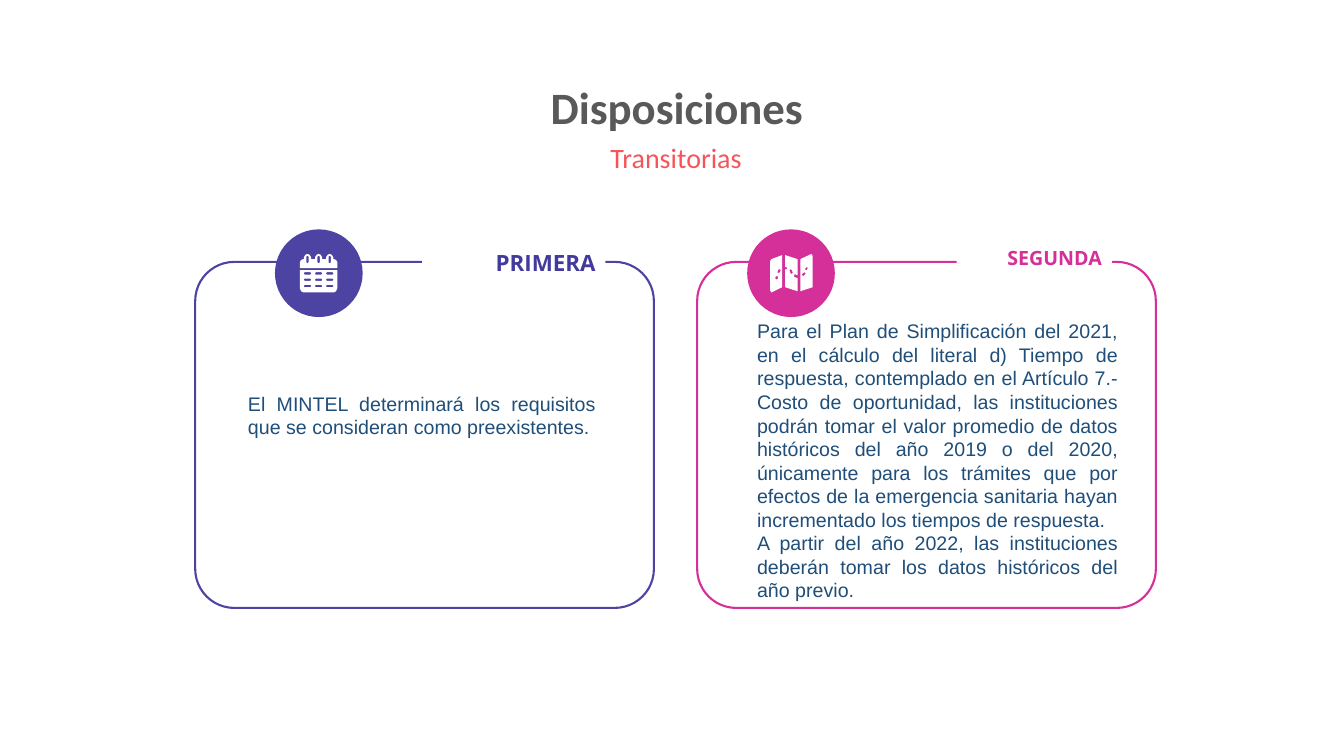
from pptx import Presentation
from pptx.dml.color import RGBColor
from pptx.enum.shapes import MSO_SHAPE
from pptx.enum.text import MSO_ANCHOR, PP_ALIGN
from pptx.util import Cm, Pt

COLORS = {
    "title": "595959",
    "subtitle": "F75459",
    "purple": "4D43A3",
    "purple_text": "423A9C",
    "pink": "D5309A",
    "body": "1F4E79",
    "white": "FFFFFF",
}


def color(name):
    return RGBColor.from_string(COLORS[name])


def paint(shape, fill, line=None):
    shape.shadow.inherit = False
    if fill:
        shape.fill.solid()
        shape.fill.fore_color.rgb = color(fill)
    else:
        shape.fill.background()
    if line:
        shape.line.color.rgb = color(line)
        shape.line.width = Pt(1.5)
    else:
        shape.line.fill.background()


def add_preset(shapes, kind, box, fill=None, line=None):
    shape = shapes.add_shape(kind, *(Cm(length) for length in box))
    paint(shape, fill, line)
    return shape


def add_outline(shapes, left, top, contours):
    """Draw one white shape; contours after the first are cut out of it."""
    builder = None
    for contour in contours:
        start, *others = [(Cm(left + x), Cm(top + y)) for x, y in contour]
        if builder:
            builder.move_to(*start)
        else:
            builder = shapes.build_freeform(*start)
        builder.add_line_segments(others, close=True)
    paint(builder.convert_to_shape(), "white")


def write(shape, texts, size, font, ink, align, bold=False,
          anchor=MSO_ANCHOR.TOP, inset=0.25):
    frame = shape.text_frame
    frame.word_wrap = True
    frame.vertical_anchor = anchor
    frame.margin_left = frame.margin_right = Cm(0.25)
    frame.margin_top = frame.margin_bottom = Cm(inset)
    for index, text in enumerate(texts):
        para = frame.add_paragraph() if index else frame.paragraphs[0]
        para.alignment = align
        span = para.add_run()
        span.text = text
        span.font.size = Pt(size)
        span.font.name = font
        span.font.bold = bold
        span.font.color.rgb = color(ink)
    return frame


def add_text(page, box, *args, **options):
    shape = page.shapes.add_textbox(*(Cm(length) for length in box))
    return write(shape, *args, **options)


def add_heading(page, left, top, width):
    frame = add_text(page, (left, top, width, 1.68), ["Disposiciones"], 32,
                     "Calibri", "title", PP_ALIGN.CENTER, bold=True, inset=0.13)
    frame.paragraphs[0].line_spacing = 1.1
    frame.paragraphs[0].space_after = Pt(6)
    add_text(page, (left + 3.33, top + 1.66, width - 6.7, 1.11), ["Transitorias"],
             20, "Calibri", "subtitle", PP_ALIGN.CENTER, inset=0.13)


def pill(x, y, width, height):
    cut = min(width, height) / 3
    right, bottom = x + width, y + height
    return [(x + cut, y), (right - cut, y), (right, y + cut), (right, bottom - cut),
            (right - cut, bottom), (x + cut, bottom), (x, bottom - cut), (x, y + cut)]


def add_calendar(shapes, left, top):
    columns = [0.1 + 0.28 * column for column in range(3)]
    # Sheet with day marks
    sheet = [(0, 0.41), (0.94, 0.41), (0.94, 0.87), (0.91, 0.94), (0.85, 0.97),
             (0.09, 0.97), (0.03, 0.94), (0, 0.87)]
    days = [pill(x, 0.46 + 0.16 * row, 0.18, 0.06)
            for row in range(3) for x in columns]
    add_outline(shapes, left, top, [sheet, *days])
    # Header with binding rings
    ring = [(0, 0.13), (0, 0.08), (0.04, 0.02), (0.09, 0), (0.14, 0.02),
            (0.18, 0.08), (0.18, 0.13)]
    header = [(0, 0.36), (0, 0.2), (0.03, 0.15), (0.08, 0.13)]
    header += [(x + dx, y) for x in columns for dx, y in ring]
    header += [(0.86, 0.13), (0.91, 0.15), (0.94, 0.2), (0.94, 0.36)]
    slots = [pill(x + 0.06, 0.05, 0.06, 0.18) for x in columns]
    add_outline(shapes, left, top, [header, *slots])


def add_map(shapes, left, top):
    # Three folded panels, each with its stretch of the dashed route cut out
    panels = [
        [[(0.3, 0.03), (0.03, 0.13), (0, 0.18), (0, 0.92), (0.03, 0.97), (0.3, 0.84)],
         [(0.23, 0.38), (0.27, 0.41), (0.23, 0.48), (0.18, 0.47), (0.2, 0.4)],
         pill(0.13, 0.56, 0.07, 0.08)],
        [[(0.38, 0.03), (0.38, 0.33), (0.43, 0.34), (0.43, 0.38), (0.38, 0.39),
          (0.38, 0.84), (0.69, 0.94), (0.69, 0.61), (0.61, 0.58), (0.6, 0.53),
          (0.63, 0.51), (0.69, 0.54), (0.69, 0.13)],
         [(0.51, 0.38), (0.55, 0.41), (0.57, 0.48), (0.54, 0.51), (0.5, 0.47),
          (0.49, 0.41)]],
        [[(1.04, 0), (0.76, 0.13), (0.76, 0.94), (1.07, 0.84), (1.07, 0.05)],
         [(0.91, 0.33), (0.95, 0.35), (0.92, 0.41), (0.87, 0.39)],
         [(0.86, 0.46), (0.9, 0.49), (0.84, 0.56), (0.79, 0.53), (0.82, 0.49)]],
    ]
    for contours in panels:
        add_outline(shapes, left, top, contours)


def add_card(page, left, top, card):
    ink = card["ink"]

    def place(x, y, width, height):
        return left + x, top + y, width, height

    # Frame
    frame = add_preset(page.shapes, MSO_SHAPE.ROUNDED_RECTANGLE,
                       place(0, 0, 11.56, 8.72), line=ink)
    frame.adjustments[0] = 0.113
    # Badge and its icon
    badge = page.shapes.add_group_shape().shapes
    badge_x = card["badge_x"]
    add_preset(badge, MSO_SHAPE.OVAL, place(badge_x, -0.82, 2.21, 2.21), ink)
    card["icon"](badge, left + badge_x + card["icon_x"], top - 0.2)
    # Label interrupting the frame
    label = add_preset(page.shapes, MSO_SHAPE.RECTANGLE,
                       place(*card["label_box"]), "white")
    write(label, [card["label"]], card["label_size"], "Open Sans",
          card["label_ink"], PP_ALIGN.RIGHT, bold=True, anchor=card["label_anchor"])
    # Body text
    add_text(page, place(*card["body_box"]), card["body"], 14, "Arial", "body",
             PP_ALIGN.JUSTIFY, anchor=MSO_ANCHOR.MIDDLE)


CARDS = [
    {
        "ink": "purple", "badge_x": 2.01, "icon": add_calendar, "icon_x": 0.63,
        "label": "PRIMERA", "label_size": 16, "label_ink": "purple_text",
        "label_anchor": MSO_ANCHOR.BOTTOM, "label_box": (5.72, -0.91, 4.62, 1.52),
        "body_box": (1.08, 2.4, 9.27, 2.92),
        "body": ["El MINTEL determinará los requisitos que se consideran como "
                 "preexistentes."],
    },
    {
        "ink": "pink", "badge_x": 1.26, "icon": add_map, "icon_x": 0.58,
        "label": "SEGUNDA", "label_size": 14, "label_ink": "pink",
        "label_anchor": MSO_ANCHOR.MIDDLE, "label_box": (6.54, -0.87, 3.91, 1.52),
        "body_box": (1.26, 2.49, 9.6, 5.03),
        "body": ["Para el Plan de Simplificación del 2021, en el cálculo del literal "
                 "d) Tiempo de respuesta, contemplado en el Artículo 7.- Costo de "
                 "oportunidad, las instituciones podrán tomar el valor promedio de "
                 "datos históricos del año 2019 o del 2020, únicamente para los "
                 "trámites que por efectos de la emergencia sanitaria hayan "
                 "incrementado los tiempos de respuesta.",
                 "A partir del año 2022, las instituciones deberán tomar los datos "
                 "históricos del año previo."],
    },
]


def main():
    deck = Presentation()
    deck.slide_width, deck.slide_height = Cm(33.87), Cm(19.05)
    page = deck.slides.add_slide(deck.slide_layouts[6])
    add_heading(page, 3.37, 1.75, 27.38)
    for index, card in enumerate(CARDS):
        add_card(page, 4.92 + 12.65 * index, 6.6, card)
    deck.save("out.pptx")


if __name__ == "__main__":
    main()
